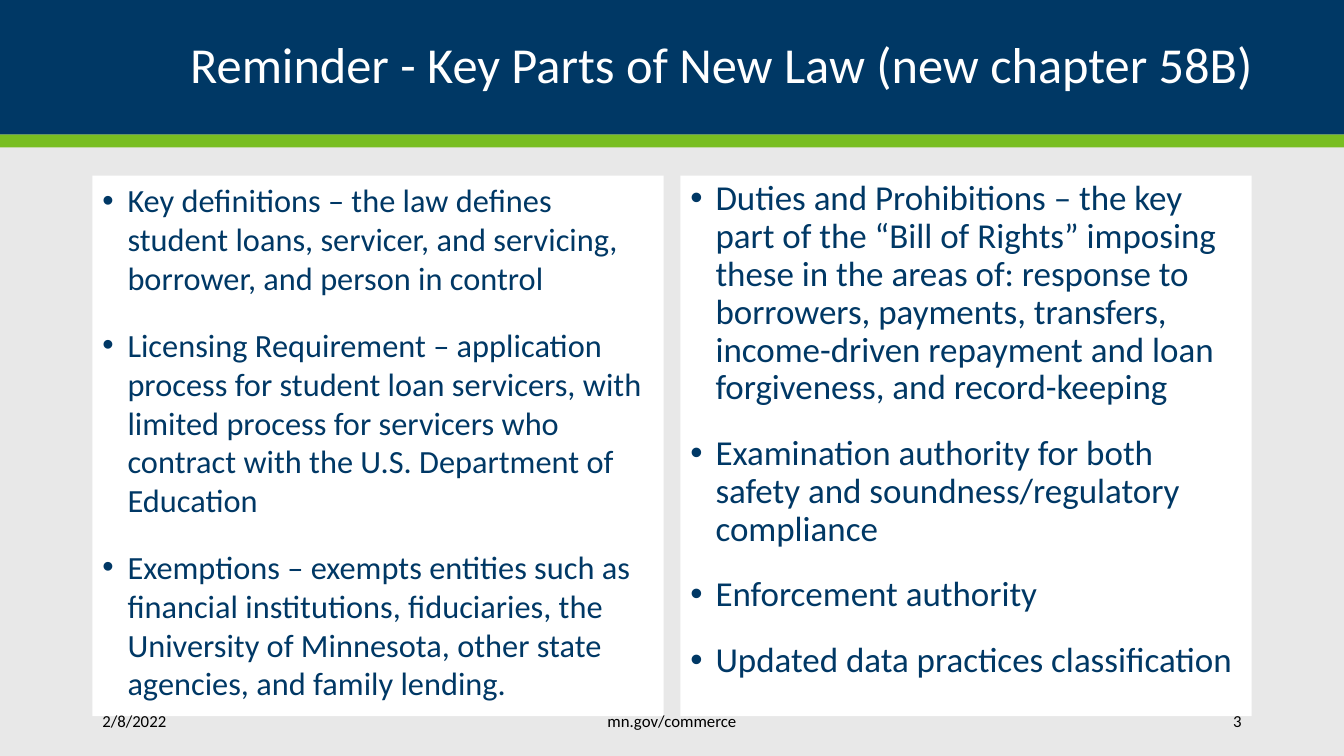
from pptx import Presentation
from pptx.dml.color import RGBColor
from pptx.enum.shapes import MSO_SHAPE
from pptx.enum.text import MSO_ANCHOR, PP_ALIGN
from pptx.oxml.ns import qn
from pptx.util import Pt
from lxml import etree

RECT = MSO_SHAPE.RECTANGLE
TOP, MIDDLE = MSO_ANCHOR.TOP, MSO_ANCHOR.MIDDLE
LEFT, CENTER, RIGHT = PP_ALIGN.LEFT, PP_ALIGN.CENTER, PP_ALIGN.RIGHT

NAVY = RGBColor(0x00, 0x38, 0x65)
GREEN = RGBColor(0x78, 0xBE, 0x21)
GRAY = RGBColor(0xE8, 0xE8, 0xE8)
WHITE = RGBColor(0xFF, 0xFF, 0xFF)
BLACK = RGBColor(0x00, 0x00, 0x00)

FONT = "Calibri"
WIDTH, HEIGHT = 960, 540
EDGE = 66
PANEL = 408

PARTS = [
    "Key definitions – the law defines student loans, servicer, and servicing, "
    "borrower, and person in control",
    "Licensing Requirement – application process for student loan servicers, "
    "with limited process for servicers who contract with the U.S. Department "
    "of Education",
    "Exemptions – exempts entities such as financial institutions, fiduciaries, "
    "the University of Minnesota, other state agencies, and family lending.",
]
DUTIES = [
    "Duties and Prohibitions – the key part of the “Bill of Rights” imposing "
    "these in the areas of: response to borrowers, payments, transfers, "
    "income-driven repayment and loan forgiveness, and record-keeping",
    "Examination authority for both safety and soundness/regulatory compliance",
    "Enforcement authority",
    "Updated data practices classification",
]


def add_block(slide, left, top, width, height, fill):
    block = slide.shapes.add_shape(RECT, Pt(left), Pt(top), Pt(width), Pt(height))
    block.shadow.inherit = False
    block.fill.solid()
    block.fill.fore_color.rgb = fill
    block.line.fill.background()
    return block


def set_frame(shape, anchor, side=7.2):
    frame = shape.text_frame
    frame.word_wrap = True
    frame.vertical_anchor = anchor
    frame.margin_left = frame.margin_right = Pt(side)
    frame.margin_top = frame.margin_bottom = Pt(3.6)
    return frame


def add_run(para, text, size, color, align=LEFT):
    para.alignment = align
    run = para.add_run()
    run.text = text
    run.font.name = FONT
    run.font.size = Pt(size)
    run.font.color.rgb = color


def add_bullet(para):
    props = para._p.get_or_add_pPr()
    props.set("marL", str(Pt(18)))
    props.set("indent", str(Pt(-18)))
    tint = etree.SubElement(props, qn("a:buClr"))
    etree.SubElement(tint, qn("a:srgbClr")).set("val", str(NAVY))
    etree.SubElement(props, qn("a:buFont")).set("typeface", "Arial")
    etree.SubElement(props, qn("a:buChar")).set("char", "•")


def add_title(slide, text):
    block = add_block(slide, 0, 0, WIDTH, 96, NAVY)
    para = set_frame(block, MIDDLE, 64.8).paragraphs[0]
    para.line_spacing = 0.9
    add_run(para, text, 36, WHITE, RIGHT)


def add_panel(slide, left, items, size, spacing):
    frame = set_frame(add_block(slide, left, 125.5, PANEL, 386, WHITE), TOP)
    for i, item in enumerate(items):
        para = frame.add_paragraph() if i else frame.paragraphs[0]
        para.line_spacing = spacing
        para.space_before = para.space_after = Pt(10)
        add_bullet(para)
        add_run(para, item, size, NAVY)


def add_footer(slide, left, width, text, align):
    box = slide.shapes.add_textbox(Pt(left), Pt(500.5), Pt(width), Pt(28.75))
    add_run(set_frame(box, MIDDLE).paragraphs[0], text, 12, BLACK, align)


def main():
    deck = Presentation()
    deck.slide_width, deck.slide_height = Pt(WIDTH), Pt(HEIGHT)
    slide = deck.slides.add_slide(deck.slide_layouts[6])
    slide.background.fill.solid()
    slide.background.fill.fore_color.rgb = GRAY

    add_block(slide, 0, 96, WIDTH, 9.25, GREEN)
    add_title(slide, "Reminder - Key Parts of New Law (new chapter 58B)")
    add_panel(slide, EDGE, PARTS, 23.1, 1.0)
    add_panel(slide, WIDTH - EDGE - PANEL, DUTIES, 25, 0.9)
    add_footer(slide, EDGE, 107, "2/8/2022", LEFT)
    add_footer(slide, 260, 440, "mn.gov/commerce", CENTER)
    add_footer(slide, WIDTH - EDGE - 115, 115, "3", RIGHT)
    deck.save("out.pptx")


if __name__ == "__main__":
    main()
